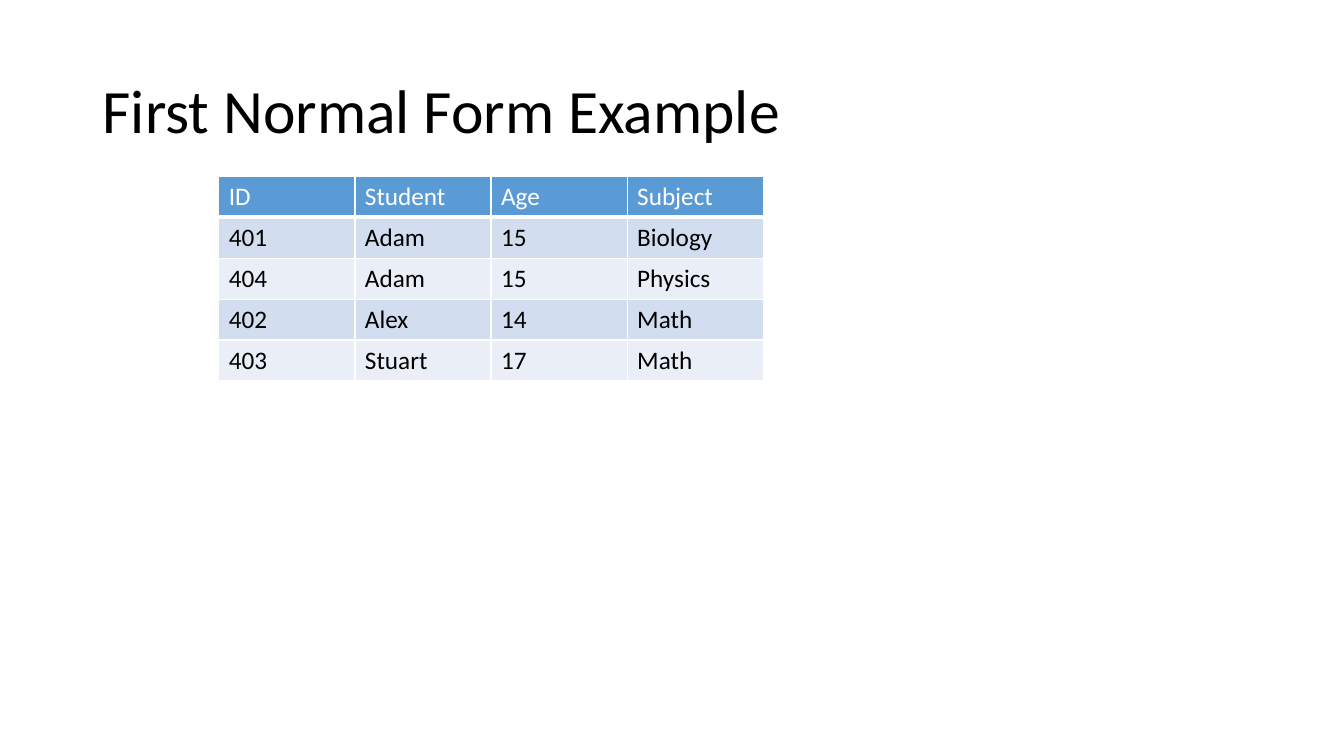
"""Build the First Normal Form example slide."""
import pptx
import pptx.dml.color
import pptx.enum.text
import pptx.oxml
import pptx.oxml.ns
import pptx.util
from pptx.util import Inches

WHITE = pptx.dml.color.RGBColor(0xFF, 0xFF, 0xFF)
BLACK = pptx.dml.color.RGBColor(0x00, 0x00, 0x00)
HEADER_BLUE = pptx.dml.color.RGBColor(0x5B, 0x9B, 0xD5)
BAND_DARK = pptx.dml.color.RGBColor(0xD2, 0xDE, 0xEF)
BAND_LIGHT = pptx.dml.color.RGBColor(0xEA, 0xEF, 0xF7)
MIDDLE = pptx.enum.text.MSO_ANCHOR.MIDDLE

STUDENT_ROWS = [
    ("ID", "Student", "Age", "Subject"),
    ("401", "Adam", "15", "Biology"),
    ("404", "Adam", "15", "Physics"),
    ("402", "Alex", "14", "Math"),
    ("403", "Stuart", "17", "Math"),
]


def style_font(paragraph, size, color):
    """Set the font of a whole paragraph."""
    paragraph.font.name = "Calibri"
    paragraph.font.size = pptx.util.Pt(size)
    paragraph.font.bold = False
    paragraph.font.color.rgb = color


def add_title(slide, text):
    """Add the slide title."""
    shape = slide.shapes.add_textbox(Inches(0.92), Inches(0.4), Inches(11.5), Inches(1.45))
    shape.text_frame.word_wrap = True
    shape.text_frame.vertical_anchor = MIDDLE
    paragraph = shape.text_frame.paragraphs[0]
    paragraph.text = text
    paragraph.line_spacing = 0.9
    style_font(paragraph, 44, BLACK)


def set_borders(cell, bottom_width):
    """Draw white borders round a cell, with its own width at the bottom."""
    properties = cell._tc.get_or_add_tcPr()
    for side, width in (("L", 1), ("R", 1), ("T", 1), ("B", bottom_width)):
        properties.append(pptx.oxml.parse_xml(
            f'<a:ln{side} {pptx.oxml.ns.nsdecls("a")} w="{pptx.util.Pt(width)}">'
            f'<a:solidFill><a:srgbClr val="{WHITE}"/></a:solidFill></a:ln{side}>'
        ))


def fill_cell(cell, text, fill_color, text_color, bottom_width):
    """Write and format one table cell."""
    cell.text = text
    cell.vertical_anchor = MIDDLE
    set_borders(cell, bottom_width)
    cell.fill.solid()
    cell.fill.fore_color.rgb = fill_color
    style_font(cell.text_frame.paragraphs[0], 18, text_color)


def add_student_table(slide, rows):
    """Add the table with a header row and banded body rows."""
    table = slide.shapes.add_table(
        len(rows), len(rows[0]), Inches(2.17), Inches(1.75), Inches(5.4), Inches(2.03)
    ).table
    for row_index, row in enumerate(rows):
        if row_index == 0:
            look = (HEADER_BLUE, WHITE, 3)
        else:
            look = (BAND_DARK if row_index % 2 else BAND_LIGHT, BLACK, 1)
        for column_index, text in enumerate(row):
            fill_cell(table.cell(row_index, column_index), text, *look)


def main():
    """Create and save the presentation."""
    presentation = pptx.Presentation()
    presentation.slide_width = Inches(13.33)
    presentation.slide_height = Inches(7.5)
    slide = presentation.slides.add_slide(presentation.slide_layouts[6])
    add_title(slide, "First Normal Form Example")
    add_student_table(slide, STUDENT_ROWS)
    presentation.save("out.pptx")


if __name__ == "__main__":
    main()
